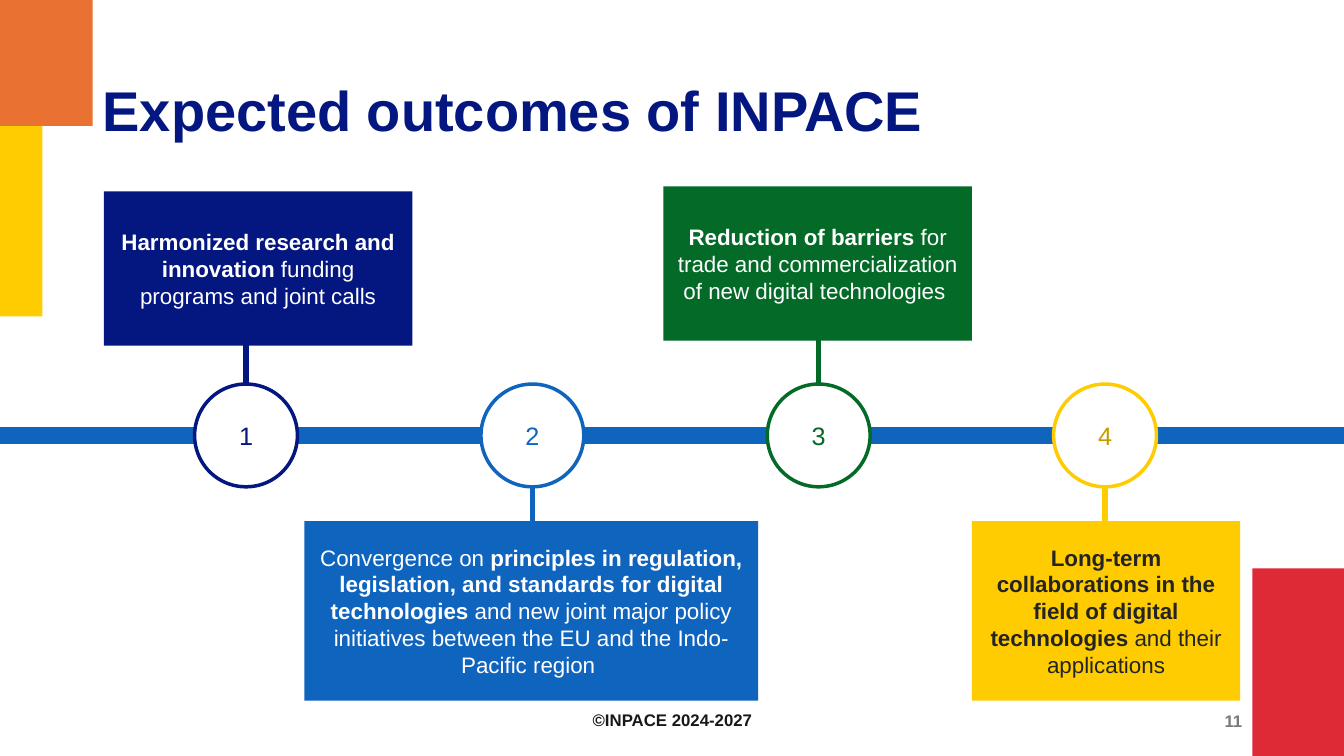
from lxml import etree
from pptx import Presentation
from pptx.dml.color import RGBColor
from pptx.enum.shapes import MSO_CONNECTOR, MSO_SHAPE
from pptx.enum.text import MSO_ANCHOR, PP_ALIGN
from pptx.oxml.ns import qn
from pptx.util import Inches, Pt

NAVY, BLUE, GREEN, YELLOW = "041680", "0F64BE", "036A28", "FFCC01"
ORANGE, RED, WHITE = "E97132", "DE2936", "FFFFFF"

CORNER_BLOCKS = [
    ((0, 1.13, 0.42, 2.01), YELLOW),
    ((12.42, 5.64, 0.92, 1.86), RED),
    ((0, 0, 0.92, 1.25), ORANGE),
]

# Box, colour, number colour, text colour, connector start and end, runs (text, bold)
OUTCOMES = [
    ((1.03, 1.9, 3.06, 1.53), NAVY, NAVY, WHITE, (2.83, 3.81),
     [("Harmonized research and innovation", True),
      (" funding programs and joint calls", False)]),
    ((3.02, 5.17, 4.5, 1.78), BLUE, BLUE, WHITE, (4.41, 5.39),
     [("Convergence on ", False),
      ("principles in regulation, legislation, and standards for digital technologies", True),
      (" and new joint major policy initiatives between the EU and the Indo-Pacific region ", False)]),
    ((6.58, 1.85, 3.06, 1.53), GREEN, GREEN, WHITE, (3.2, 4.18),
     [("Reduction of barriers", True),
      (" for trade and commercialization of new digital technologies ", False)]),
    ((9.64, 5.17, 2.66, 1.78), YELLOW, "C49C02", "242424", (4.5, 5.48),
     [("Long-term collaborations in the field of digital technologies", True),
      (" and their applications", False)]),
]

AXIS_Y = 4.32
CIRCLE_SIZE = 1.02
FIRST_X, STEP_X = 2.44, 2.84


def rgb(value):
    return RGBColor.from_string(value)


def write(shape, runs, size, color, align=PP_ALIGN.CENTER, spacing=1.0):
    """Fill the shape with one paragraph made of (text, bold) runs."""
    tf = shape.text_frame
    tf.word_wrap = True
    tf.vertical_anchor = MSO_ANCHOR.MIDDLE
    p = tf.paragraphs[0]
    p.alignment = align
    p.line_spacing = spacing
    for text, bold in runs:
        r = p.add_run()
        r.text = text
        for name, value in {"name": "Arial", "size": Pt(size), "bold": bold}.items():
            setattr(r.font, name, value)
        r.font.color.rgb = rgb(color)


def add_text(s, box, *args, **kwargs):
    write(s.shapes.add_textbox(*map(Inches, box)), *args, **kwargs)


def add_block(s, box, fill, line=None, kind=MSO_SHAPE.RECTANGLE):
    sp = s.shapes.add_shape(kind, *map(Inches, box))
    sp.shadow.inherit = False
    sp.fill.solid()
    sp.fill.fore_color.rgb = rgb(fill)
    if line:
        sp.line.color.rgb = rgb(line)
        sp.line.width = Pt(2.5)
    else:
        sp.line.fill.background()
    return sp


def add_line(s, start, end, color, width):
    line = s.shapes.add_connector(MSO_CONNECTOR.STRAIGHT, *map(Inches, start + end))
    line.line.color.rgb = rgb(color)
    line.line.width = Pt(width)
    etree.SubElement(line._element.spPr, qn("a:effectLst"))


def add_circle(s, x, number, line, color):
    box = (x - CIRCLE_SIZE / 2, AXIS_Y - CIRCLE_SIZE / 2, CIRCLE_SIZE, CIRCLE_SIZE)
    sp = add_block(s, box, WHITE, line, MSO_SHAPE.OVAL)
    write(sp, [(str(number), False)], 18, color)


def main():
    prs = Presentation()
    prs.slide_width, prs.slide_height = Inches(13.33), Inches(7.5)
    s = prs.slides.add_slide(prs.slide_layouts[6])

    for box, color in CORNER_BLOCKS:
        add_block(s, box, color)

    centers = [FIRST_X + i * STEP_X for i in range(len(OUTCOMES))]
    for x, (_, color, _, _, (top, bottom), _) in zip(centers, OUTCOMES):
        add_line(s, (x, top), (x, bottom), color, 3.75)

    add_text(s, (0.92, 0.4, 11.5, 1.45), [("Expected outcomes of INPACE", True)],
             40, NAVY, PP_ALIGN.LEFT, 0.9)
    add_text(s, (9.42, 6.95, 3, 0.4), [("11", True)], 12, "797979", PP_ALIGN.RIGHT)
    add_text(s, (4.42, 6.95, 4.5, 0.4), [("©INPACE 2024-2027", True)],
             12, "181818", spacing=0.9)

    add_line(s, (0, AXIS_Y), (13.33, AXIS_Y), BLUE, 12)
    for i, (box, color, number_color, text_color, _, runs) in enumerate(OUTCOMES):
        add_circle(s, centers[i], i + 1, color, number_color)
        write(add_block(s, box, color), runs, 16, text_color)

    prs.save("out.pptx")


if __name__ == "__main__":
    main()
